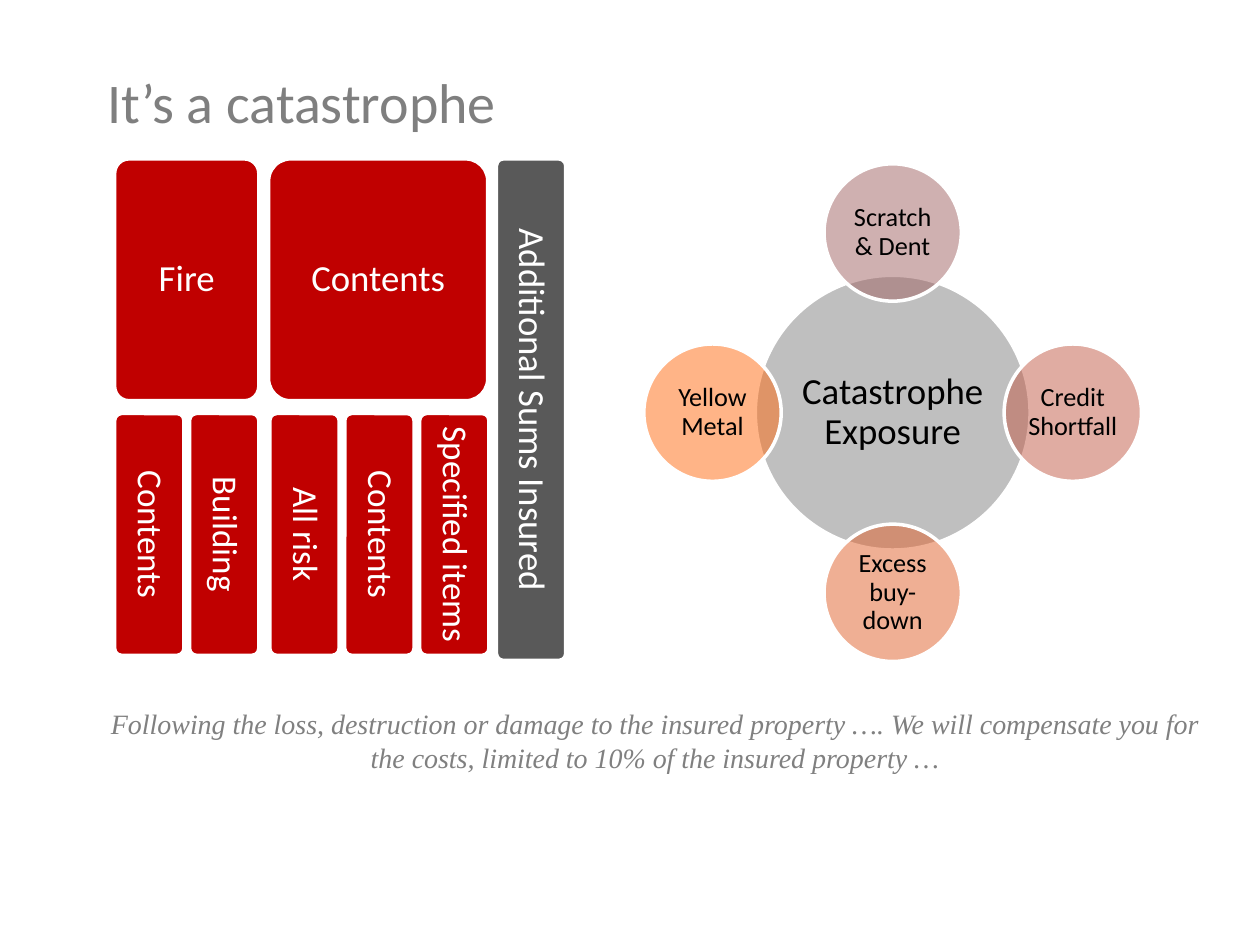
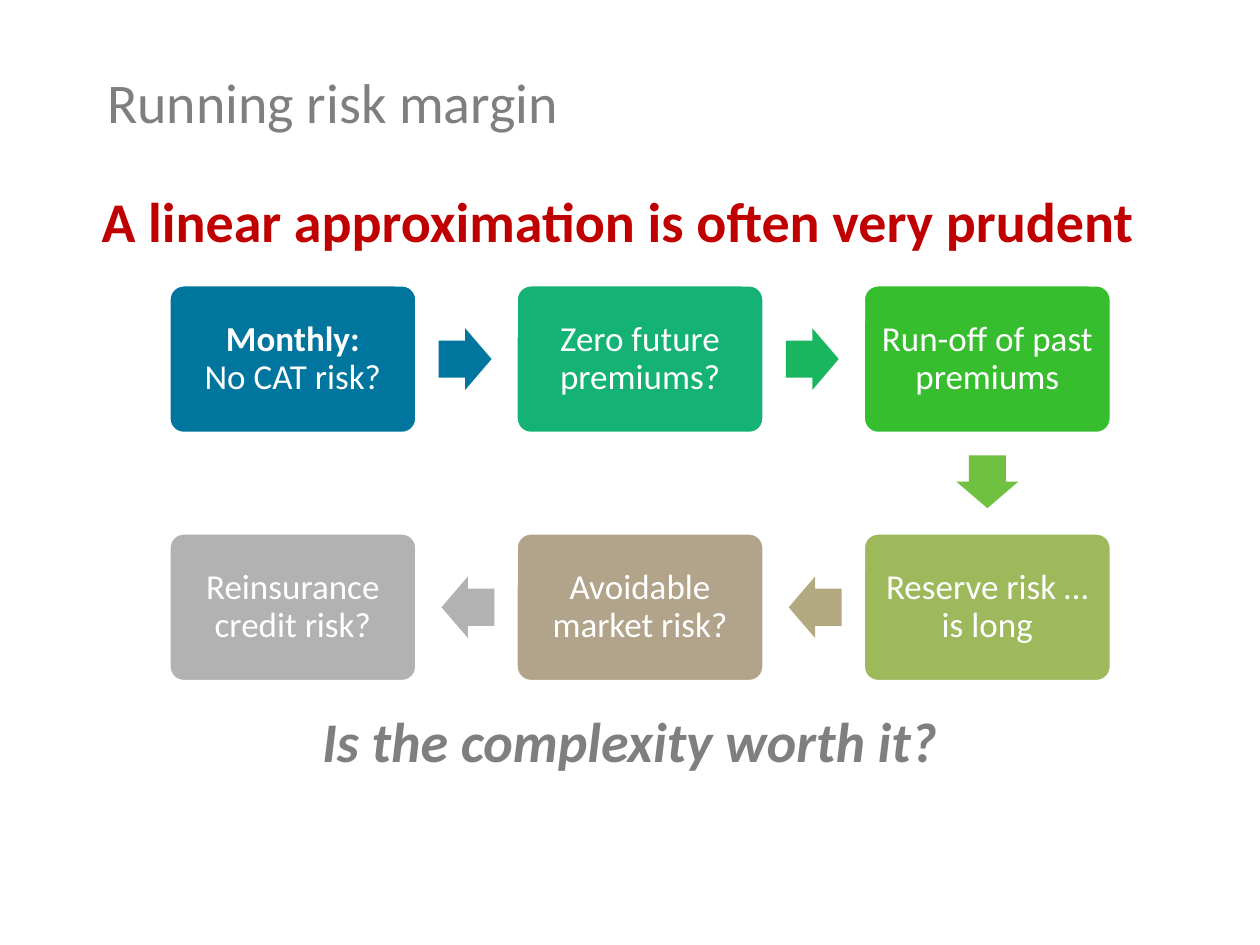
from math import cos, radians, sin

from lxml.etree import SubElement
from pptx import Presentation
from pptx.dml.color import RGBColor
from pptx.enum.shapes import MSO_SHAPE
from pptx.enum.text import MSO_ANCHOR, PP_ALIGN
from pptx.oxml.ns import qn
from pptx.util import Pt

RED, WHITE, BLACK = "C00000", "FFFFFF", "000000"
GREY, STONE = "7F7F7F", "808080"
CENTER, MIDDLE = PP_ALIGN.CENTER, MSO_ANCHOR.MIDDLE
BASE = {"name": "Calibri"}
HEAD = {**BASE, "size": Pt(32)}
QUOTE = {"name": "Times New Roman", "size": Pt(16), "italic": True}


def paint(target, color):
    """Give a font, line or fill a colour from its hex string."""
    tone = target if hasattr(target, "solid") else target.fill
    tone.solid()
    tone.fore_color.rgb = RGBColor.from_string(color)


def style(target, values):
    """Set each named attribute of the target."""
    for key, value in values.items():
        setattr(target, key, value)


def write(frame, text, look, color, align=CENTER, anchor=MIDDLE, inset=None):
    """Write one paragraph; the first of several lines is bold."""
    style(frame, {"word_wrap": True, "vertical_anchor": anchor})
    if inset is not None:
        sides = ("left", "top", "right", "bottom")
        style(frame, {f"margin_{side}": Pt(inset) for side in sides})
    para = frame.paragraphs[0]
    para.alignment = align
    lines = text.split("\n")
    for pos, line in enumerate(lines):
        if pos:
            para.add_line_break()
        run = para.add_run()
        run.text = line
        style(run.font, look)
        if len(lines) > 1:
            run.font.bold = pos == 0
        paint(run.font, color)
    return para


def draw(slide, kind, box, color, edge=True):
    """Add a flat shape, with a white edge if asked."""
    shape = slide.shapes.add_shape(kind, *map(Pt, box))
    shape.shadow.inherit = False
    paint(shape.fill, color)
    if edge:
        paint(shape.line, WHITE)
        shape.line.width = Pt(2)
    else:
        shape.line.fill.background()
    return shape


def label(shape, text, size, color, inset):
    """Write centred text inside a shape."""
    look = {**BASE, "size": Pt(size)}
    write(shape.text_frame, text, look, color, inset=inset).line_spacing = 0.9


def tile(slide, box, text, color, size, inset, turn=False):
    """Add a rounded box with a label, turned to read down if asked."""
    shape = draw(slide, MSO_SHAPE.ROUNDED_RECTANGLE, box, color)
    shape.adjustments[0] = 0.1
    label(shape, text, size, WHITE, inset)
    if turn:
        shape.element.txBody.bodyPr.set("vert", "vert")


def disc(slide, mid, size, text, color, font, inset):
    """Add a half clear circle around a midpoint."""
    box = (mid[0] - size / 2, mid[1] - size / 2, size, size)
    shape = draw(slide, MSO_SHAPE.OVAL, box, color)
    tone = shape.element.spPr.find(qn("a:solidFill"))[0]
    SubElement(tone, qn("a:alpha"), val="50000")
    label(shape, text, font, BLACK, inset)


def note(slide, box, text, look, color, anchor=MSO_ANCHOR.TOP):
    """Add a centred line of free text."""
    area = slide.shapes.add_textbox(*map(Pt, box))
    write(area.text_frame, text, look, color, anchor=anchor)


def start(deck, title):
    """Add a slide with its title."""
    slide = deck.slides.add_slide(deck.slide_layouts[5])
    head = slide.shapes.title
    box = dict(left=54, top=26.6, width=612, height=61.9)
    style(head, {key: Pt(value) for key, value in box.items()})
    write(head.text_frame, title, HEAD, GREY, PP_ALIGN.LEFT)
    return slide


def cover(slide, left, top):
    """Place the cover sections, their parts and the side bar."""
    wide, high, step, drop = 39.6, 138.2, 42.8, 145.5
    groups = [
        ("Fire", 0, 0, ["Contents", "Building"]),
        ("Contents", 88, 0.7, ["All risk", "Contents", "Specified items"]),
    ]
    for name, shift, nudge, parts in groups:
        x = left + shift
        span = step * (len(parts) - 1) + wide
        tile(slide, (x, top, span, high), name, RED, 21, 6.5)
        for pos, part in enumerate(parts):
            box = (x + nudge + pos * step, top + drop, wide, high)
            tile(slide, box, part, RED, 20, 5.8, True)
    bar = (left + 218.2, top, wide, 286.6)
    tile(slide, bar, "Additional Sums Insured", "595959", 21, 6.5, True)


def orbit(slide, left, top, side):
    """Place a hub and four circles evenly around it in a square."""
    size = 78.5
    x, y, reach = left + side / 2, top + side / 2, (side - size) / 2
    disc(slide, (x, y), 2 * size, "Catastrophe Exposure", STONE, 21, 2.2)
    moons = [
        ("Scratch & Dent", "A16363"),
        ("Credit Shortfall", "C25B47"),
        ("Excess buy-down", "E1612B"),
        ("Yellow Metal", "FF6B11"),
    ]
    for pos, (text, color) in enumerate(moons):
        turn = radians(90 * pos - 90)
        mid = (x + reach * cos(turn), y + reach * sin(turn))
        disc(slide, mid, size, text, color, 15, 1.4)


def flow(slide, left, top):
    """Place six steps in a snake, with an arrow after each but the last."""
    wide, high, across, down = 141.8, 85, 198.4, 141.8
    long, thick, back = 30.2, 35.3, 0.8
    steps = [
        ("Monthly:\nNo CAT risk?", "00759E", "00759E"),
        ("Zero future premiums?", "14B274", "1AB65F"),
        ("Run-off of past premiums", "36BE2F", "70C041"),
        ("Reserve risk … is long", "9DB95C", "B3A980"),
        ("Avoidable market risk?", "B2A48B", "B2B2B2"),
        ("Reinsurance credit risk?", "B2B2B2", None),
    ]
    turns = [0, 0, 90, 180, 180, 180]
    x, y = left, top
    for (text, color, tip), turn in zip(steps, turns):
        tile(slide, (x, y, wide, high), text, color, 20, 5.8)
        dx, dy = round(cos(radians(turn))), round(sin(radians(turn)))
        if tip:
            ax = x + wide / 2 + dx * (across / 2 - back) - long / 2
            ay = y + high / 2 + dy * (down / 2 - back) - thick / 2
            box = (ax, ay, long, thick)
            arrow = draw(slide, MSO_SHAPE.RIGHT_ARROW, box, tip, False)
            arrow.adjustments[0] = 0.6
            arrow.adjustments[1] = 0.5
            arrow.rotation = turn
        x, y = x + dx * across, y + dy * down


def main():
    """Build both slides and save them."""
    deck = Presentation()
    style(deck, {"slide_width": Pt(720), "slide_height": Pt(540)})

    slide = start(deck, "It’s a catastrophe")
    cover(slide, 65.5, 90.8)
    quote = (
        "Following the loss, destruction or damage to the insured property …. "
        "We will compensate you for the costs, limited to 10% of the insured "
        "property …"
    )
    note(slide, (54, 394.6, 640.8, 56.9), quote, QUOTE, STONE, MIDDLE)
    orbit(slide, 367.9, 93.6, 284.4)

    slide = start(deck, "Running risk margin")
    bold = {**HEAD, "bold": True}
    claim = "A linear approximation is often very prudent"
    note(slide, (0, 103, 706.4, 46), claim, bold, RED)
    flow(slide, 96.5, 162.7)
    ask = "Is the complexity worth it?"
    note(slide, (0, 400.3, 720, 46), ask, {**bold, "italic": True}, GREY)

    deck.save("out.pptx")


if __name__ == "__main__":
    main()
